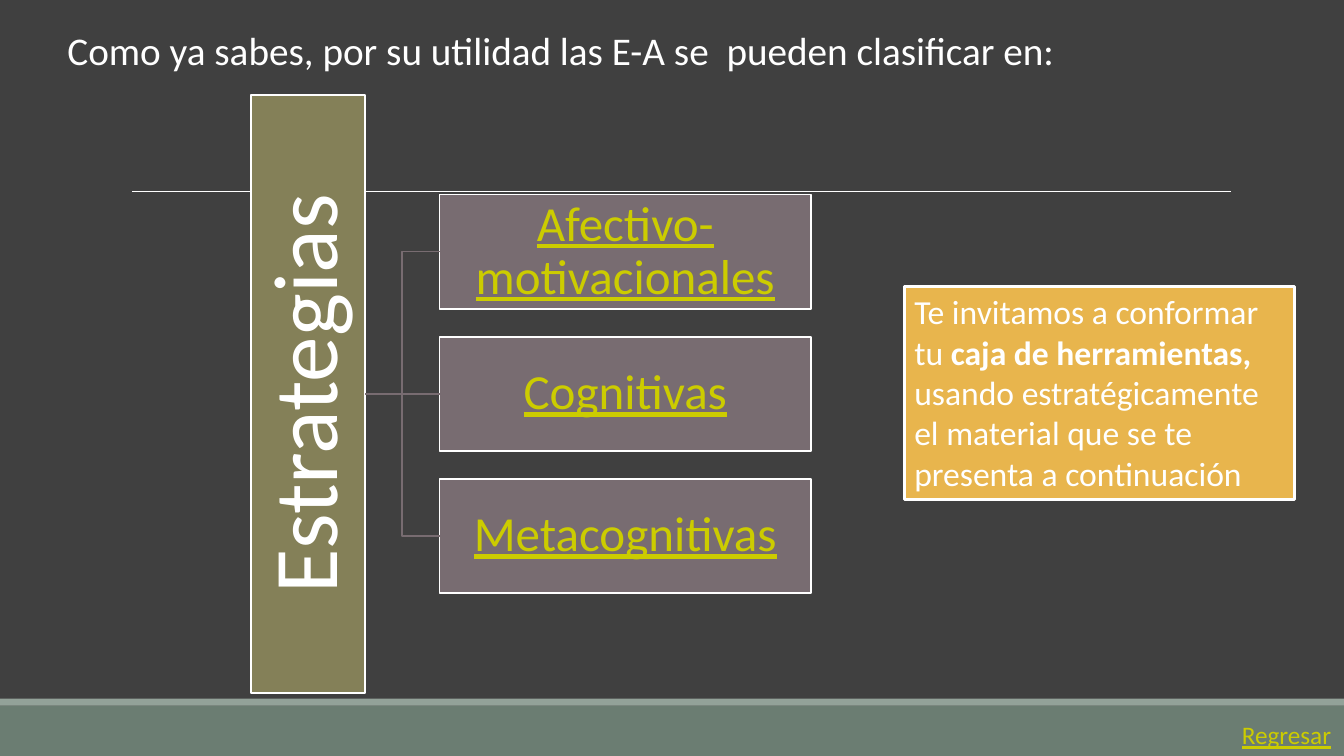
from dataclasses import dataclass

from lxml.etree import SubElement
from pptx import Presentation
from pptx.dml.color import RGBColor
from pptx.enum.shapes import MSO_CONNECTOR, MSO_SHAPE
from pptx.enum.text import MSO_ANCHOR, MSO_AUTO_SIZE, PP_ALIGN
from pptx.oxml.ns import qn
from pptx.shapes.autoshape import Shape
from pptx.shapes.connector import Connector
from pptx.slide import Slide
from pptx.util import Pt

HUES = {
    "back": "404040",
    "white": "FFFFFF",
    "band": "6B7D72",
    "strip": "93A299",
    "olive": "848058",
    "mauve": "786C71",
    "gold": "E8B54D",
    "link": "CCCC00",
}
FACE = "Calibri"


@dataclass(frozen=True)
class Box:
    left: float
    top: float
    width: float
    height: float
    fill: str
    edge: float = 0

    @property
    def mid(self) -> float:
        return self.top + self.height / 2


@dataclass(frozen=True)
class Label:
    size: float
    hue: str = "white"
    align: PP_ALIGN = PP_ALIGN.LEFT
    under: bool = False
    space: float = 1
    inset: float | None = None


def hue(name: str) -> RGBColor:
    return RGBColor.from_string(HUES[name])


def draw_box(slide: Slide, box: Box) -> Shape:
    shape = slide.shapes.add_shape(
        MSO_SHAPE.RECTANGLE, Pt(box.left), Pt(box.top), Pt(box.width), Pt(box.height)
    )
    shape.shadow.inherit = False
    shape.fill.solid()
    shape.fill.fore_color.rgb = hue(box.fill)
    if box.edge:
        shape.line.color.rgb = hue("white")
        shape.line.width = Pt(box.edge)
    else:
        shape.line.fill.background()
    return shape


def write(shape: Shape, label: Label, *parts: tuple[str, bool]) -> None:
    frame = shape.text_frame
    frame.word_wrap = True
    if label.inset is not None:
        frame.margin_left = frame.margin_right = Pt(label.inset)
        frame.margin_top = frame.margin_bottom = Pt(label.inset)
    para = frame.paragraphs[0]
    para.alignment = label.align
    para.line_spacing = label.space
    font = para.font
    font.name = FACE
    font.size = Pt(label.size)
    font.color.rgb = hue(label.hue)
    font.underline = label.under
    for text, bold in parts:
        run = para.add_run()
        run.text = text
        if bold:
            run.font.bold = True


def draw_line(
    slide: Slide, kind: MSO_CONNECTOR, ends: tuple[float, ...], tint: str, width: float
) -> Connector:
    line = slide.shapes.add_connector(kind, *(Pt(end) for end in ends))
    line.line.color.rgb = hue(tint)
    line.line.width = Pt(width)
    SubElement(line._element.spPr, qn("a:effectLst"))
    return line


def draw_tree(slide: Slide) -> None:
    bar = Box(6.5, 240.5, 427, 81.5, "olive", 1.25)
    root = draw_box(slide, bar)
    root.rotation = 270
    write(root, Label(65, align=PP_ALIGN.CENTER, space=0.9, inset=3.6), ("Estrategias", False))
    edge = bar.left + (bar.width + bar.height) / 2
    names = ("Afectivo-motivacionales", "Cognitivas", "Metacognitivas")
    style = Label(35, "link", PP_ALIGN.CENTER, True, 0.9, 1.6)
    for row, name in enumerate(names):
        box = Box(314, bar.top + 101.5 * (row - 1), 265.5, bar.height, "mauve", 1.25)
        leaf = draw_box(slide, box)
        write(leaf, style, (name, False))
        kind = MSO_CONNECTOR.STRAIGHT if box.mid == bar.mid else MSO_CONNECTOR.ELBOW
        line = draw_line(slide, kind, (edge, bar.mid, box.left, box.mid), "mauve", 1.25)
        line.begin_connect(root, 2)
        line.begin_x, line.begin_y = Pt(edge), Pt(bar.mid)
        line.end_connect(leaf, 1)


def draw_title(slide: Slide) -> None:
    title = slide.shapes.title
    title.left, title.top, title.width, title.height = Pt(41), Pt(15), Pt(826), Pt(41)
    title.text_frame.vertical_anchor = MSO_ANCHOR.TOP
    title.text_frame.auto_size = MSO_AUTO_SIZE.SHAPE_TO_FIT_TEXT
    write(title, Label(28), ("Como ya sabes, por su utilidad las E-A se  pueden clasificar en:", False))


def draw_note(slide: Slide) -> None:
    note = draw_box(slide, Box(646, 204.5, 278.5, 152.5, "gold", 2))
    note.text_frame.vertical_anchor = MSO_ANCHOR.TOP
    write(
        note,
        Label(24),
        ("Te invitamos a conformar tu ", False),
        ("caja de herramientas, ", True),
        ("usando estratégicamente el material que se te presenta a continuación", False),
    )


def main() -> None:
    deck = Presentation()
    deck.slide_width, deck.slide_height = Pt(960), Pt(540)
    slide = deck.slides.add_slide(deck.slide_layouts[5])
    slide.background.fill.solid()
    slide.background.fill.fore_color.rgb = hue("back")
    draw_line(slide, MSO_CONNECTOR.STRAIGHT, (94.5, 136.8, 879, 136.8), "white", 0.5)
    for box in (Box(0, 504, 960, 36, "band"), Box(0, 499, 960, 5, "strip")):
        draw_box(slide, box)
    draw_title(slide)
    draw_tree(slide)
    draw_note(slide)
    back = slide.shapes.add_textbox(Pt(880), Pt(510.5), Pt(80), Pt(29))
    write(back, Label(18, "link", under=True), ("Regresar", False))
    deck.save("out.pptx")


if __name__ == "__main__":
    main()
